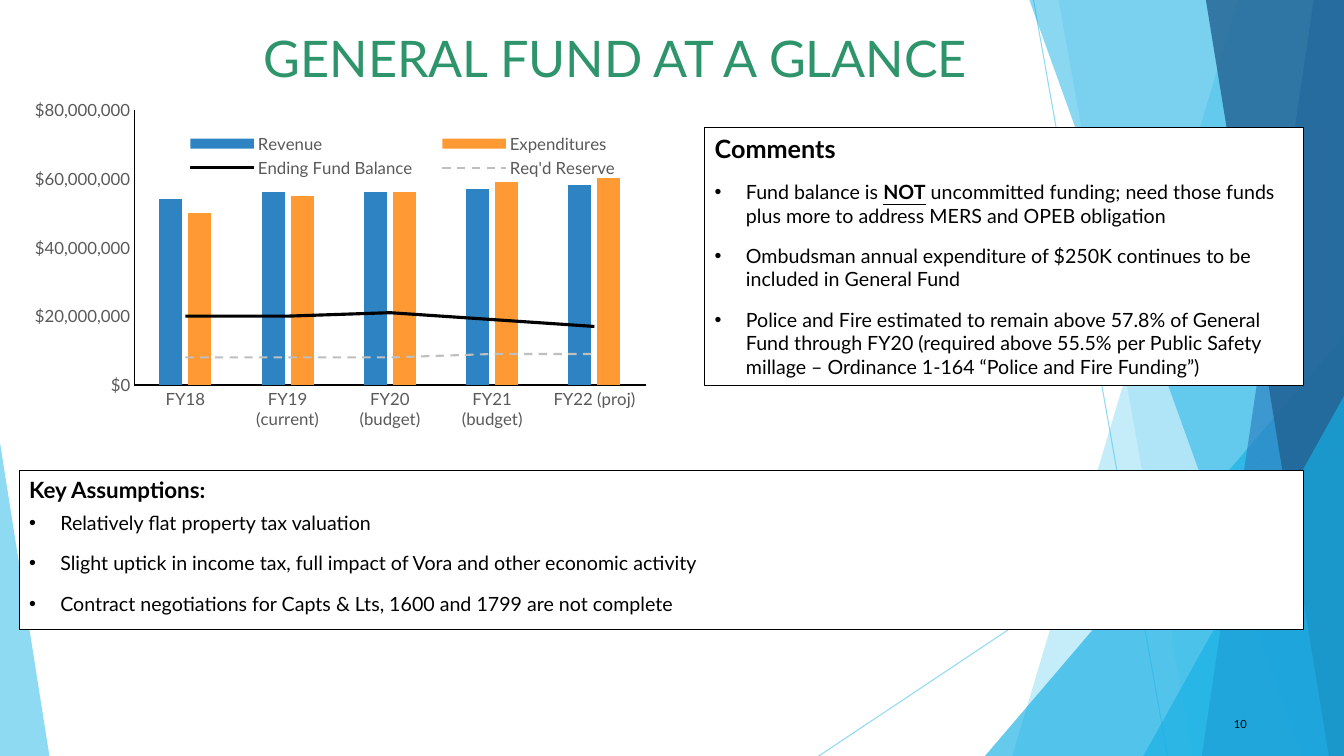
"""Build the General Fund overview slide with a combined chart and two comment boxes."""
from lxml.etree import SubElement
from pptx import Presentation
from pptx.chart.data import CategoryChartData
from pptx.dml.color import RGBColor
from pptx.enum.chart import XL_CHART_TYPE, XL_LEGEND_POSITION, XL_MARKER_STYLE, XL_TICK_MARK
from pptx.enum.dml import MSO_LINE
from pptx.enum.shapes import MSO_CONNECTOR, MSO_SHAPE
from pptx.enum.text import MSO_ANCHOR, PP_ALIGN
from pptx.oxml import parse_xml
from pptx.oxml.ns import nsdecls, qn
from pptx.util import Inches, Pt

SKY = RGBColor(0x5F, 0xCB, 0xEF)
CYAN = RGBColor(0x17, 0xB0, 0xE4)
BLUE = RGBColor(0x2E, 0x83, 0xC3)
NAVY = RGBColor(0x22, 0x62, 0x92)
GREEN = RGBColor(0x2E, 0x94, 0x6B)
ORANGE = RGBColor(0xFF, 0x99, 0x33)
BLACK = RGBColor(0, 0, 0)
WHITE = RGBColor(0xFF, 0xFF, 0xFF)
GRAY = RGBColor(0x59, 0x59, 0x59)
SILVER = RGBColor(0xBF, 0xBF, 0xBF)
FONT = "Lato"

prs = Presentation()
prs.slide_width, prs.slide_height = Inches(13.33), Inches(7.5)
s = prs.slides.add_slide(prs.slide_layouts[6])


def at(*percents):
    """Turn alternating x and y percentages of the slide into lengths."""
    sides = (prs.slide_width, prs.slide_height)
    return [round(v * sides[i % 2] / 100) for i, v in enumerate(percents)]


def add_text(tf, text, size=14, color=BLACK, bold=False, align=PP_ALIGN.LEFT,
             bullet=False, before=0, after=0):
    """Add a paragraph; parts between underscores are bold and underlined."""
    tf.word_wrap = True
    tf.vertical_anchor = MSO_ANCHOR.TOP
    p = tf.paragraphs[0] if not tf.text else tf.add_paragraph()
    p.alignment, p.space_before, p.space_after = align, Pt(before), Pt(after)
    if bullet:
        pPr = p._p.get_or_add_pPr()
        pPr.set("marL", str(Inches(0.31)))
        pPr.set("indent", str(-Inches(0.31)))
        SubElement(pPr, qn("a:buFont")).set("typeface", "Arial")
        SubElement(pPr, qn("a:buChar")).set("char", "•")
    for i, part in enumerate(text.split("_")):
        r = p.add_run()
        r.text = part
        r.font.name, r.font.size, r.font.color.rgb = FONT, Pt(size), color
        r.font.bold = bold or i % 2 == 1
        if i % 2:
            r.font.underline = True


for ends in [(76.9, 0, 86.87, 100), (100, 53.73, 60.92, 100)]:
    line = s.shapes.add_connector(MSO_CONNECTOR.STRAIGHT, *at(*ends))
    line.line.color.rgb, line.line.width = SKY, Pt(0.75)
    spPr = line._element.spPr
    SubElement(spPr.find(".//" + qn("a:srgbClr")), qn("a:alpha")).set("val", "70000")
    SubElement(spPr, qn("a:effectLst"))

facets = [
    ("band", (92.12, 75.32), SKY, 36),
    ("band", (78.77, 88.75), SKY, 20),
    ("triangle", (73.29, 44.4, 26.71, 55.6), CYAN, 66),
    ("band", (76.59, 96.85), CYAN, 50),
    ("band", (97.75, 89.42), BLUE, 70),
    ("band", (89.72, 98.87), NAVY, 80),
    ("triangle", (85.07, 52.4, 14.93, 47.6), CYAN, 66),
    ("triangle", (0, 58.53, 3.68, 41.47), SKY, 70),
]
for kind, place, color, alpha in facets:
    if kind == "band":
        top, bottom = place
        fb = s.shapes.build_freeform(*at(top, 0))
        fb.add_line_segments([at(100, 0), at(100, 100), at(bottom, 100)], close=True)
        sp = fb.convert_to_shape()
    else:
        sp = s.shapes.add_shape(MSO_SHAPE.ISOSCELES_TRIANGLE, *at(*place))
        sp.adjustments[0] = 1 if place[0] else 0
    sp.shadow.inherit = False
    sp.line.fill.background()
    sp.fill.solid()
    sp.fill.fore_color.rgb = color
    SubElement(sp._element.spPr.find(".//" + qn("a:srgbClr")), qn("a:alpha")).set("val", str(alpha * 1000))

title = s.shapes.add_textbox(*at(5.55, 2.93, 80.5, 10.4))
add_text(title.text_frame, "GENERAL FUND AT A GLANCE", size=36, color=GREEN, align=PP_ALIGN.CENTER)

data = CategoryChartData(number_format='"$"#,##0')
data.categories = ["FY18", "FY19 (current)", "FY20 (budget)", "FY21 (budget)", "FY22 (proj)"]
for name, millions in [
    ("Revenue", (54, 56, 56, 57, 58)),
    ("Expenditures", (50, 55, 56, 59, 60)),
    ("Ending Fund Balance", (20, 20, 21, 19, 17)),
    ("Req'd Reserve", (8, 8, 8, 9, 9)),
]:
    data.add_series(name, [m * 1000000 for m in millions])
chart = s.shapes.add_chart(XL_CHART_TYPE.COLUMN_CLUSTERED, *at(1.43, 12.4, 47.56, 52.8), data).chart
chart.has_title = False
chart.font.name, chart.font.size, chart.font.color.rgb = FONT, Pt(12), GRAY

bars = chart.plots[0]
bars.gap_width, bars.overlap, bars.vary_by_categories = 219, -27, False
bar_xml = bars._element
line_xml = parse_xml(
    f'<c:lineChart {nsdecls("c")}><c:grouping val="standard"/><c:varyColors val="0"/></c:lineChart>')
for ser in bar_xml.findall(qn("c:ser"))[2:]:
    for flag in ser.findall(qn("c:invertIfNegative")):
        ser.remove(flag)
    line_xml.append(ser)
SubElement(line_xml, qn("c:marker")).set("val", "1")
for axis_id in bar_xml.findall(qn("c:axId")):
    SubElement(line_xml, qn("c:axId")).set("val", axis_id.get("val"))
bar_xml.addnext(line_xml)

for series, color in zip(bars.series, (BLUE, ORANGE)):
    series.format.fill.solid()
    series.format.fill.fore_color.rgb = color
line_styles = [(BLACK, 2.25, MSO_LINE.SOLID), (SILVER, 1.5, MSO_LINE.DASH)]
for series, (color, width, dash) in zip(chart.plots[1].series, line_styles):
    series.smooth = False
    series.marker.style = XL_MARKER_STYLE.NONE
    ln = series.format.line
    ln.color.rgb, ln.width, ln.dash_style = color, Pt(width), dash

for axis in (chart.category_axis, chart.value_axis):
    axis.has_major_gridlines = False
    axis.major_tick_mark = axis.minor_tick_mark = XL_TICK_MARK.NONE
    axis.format.line.color.rgb, axis.format.line.width = BLACK, Pt(0.75)
values = chart.value_axis
values.minimum_scale, values.maximum_scale, values.major_unit = 0, 80000000, 20000000
values.tick_labels.number_format = '"$"#,##0'
values.tick_labels.number_format_is_linked = False

chart.has_legend = True
legend = chart.legend
legend.position, legend.include_in_layout = XL_LEGEND_POSITION.BOTTOM, False
plot_area = chart._chartSpace.chart.plotArea
for owner, target, box in [
    (plot_area, "inner", (0.18, 0.04, 0.8, 0.69)),
    (legend._element, None, (0.23, 0.09, 0.74, 0.13)),
]:
    for old in owner.findall(qn("c:layout")):
        owner.remove(old)
    layout = parse_xml(f'<c:layout {nsdecls("c")}><c:manualLayout/></c:layout>')
    manual = layout[0]
    if target:
        SubElement(manual, qn("c:layoutTarget")).set("val", target)
    for tag in ("xMode", "yMode"):
        SubElement(manual, qn("c:" + tag)).set("val", "edge")
    for tag, share in zip("xywh", box):
        SubElement(manual, qn("c:" + tag)).set("val", str(share))
    if target:
        owner.insert(0, layout)
    else:
        owner.find(qn("c:legendPos")).addnext(layout)

panels = [
    ((52.44, 16.93, 44.56, 34.13), "Comments", 18, 12, 0, [
        "Fund balance is _NOT_ uncommitted funding; need those funds plus more to address MERS and OPEB obligation",
        "Ombudsman annual expenditure of $250K continues to be included in General Fund",
        "Police and Fire estimated to remain above 57.8% of General Fund through FY20 (required above 55.5% "
        "per Public Safety millage – Ordinance 1-164 “Police and Fire Funding”)",
    ]),
    ((1.43, 62.27, 95.57, 21.07), "Key Assumptions:", 16, 6, 6, [
        "Relatively flat property tax valuation",
        "Slight uptick in income tax, full impact of Vora and other economic activity",
        "Contract negotiations for Capts & Lts, 1600 and 1799 are not complete",
    ]),
]
for place, heading, size, before, after, points in panels:
    sp = s.shapes.add_shape(MSO_SHAPE.RECTANGLE, *at(*place))
    sp.shadow.inherit = False
    sp.fill.solid()
    sp.fill.fore_color.rgb = WHITE
    sp.line.color.rgb, sp.line.width = BLACK, Pt(0.75)
    add_text(sp.text_frame, heading, size=size, bold=True)
    for point in points:
        add_text(sp.text_frame, point, bullet=True, before=before, after=after)

number = s.shapes.add_textbox(*at(91.07, 94.27, 2.63, 3.2))
add_text(number.text_frame, "10", size=8)

prs.save("out.pptx")
